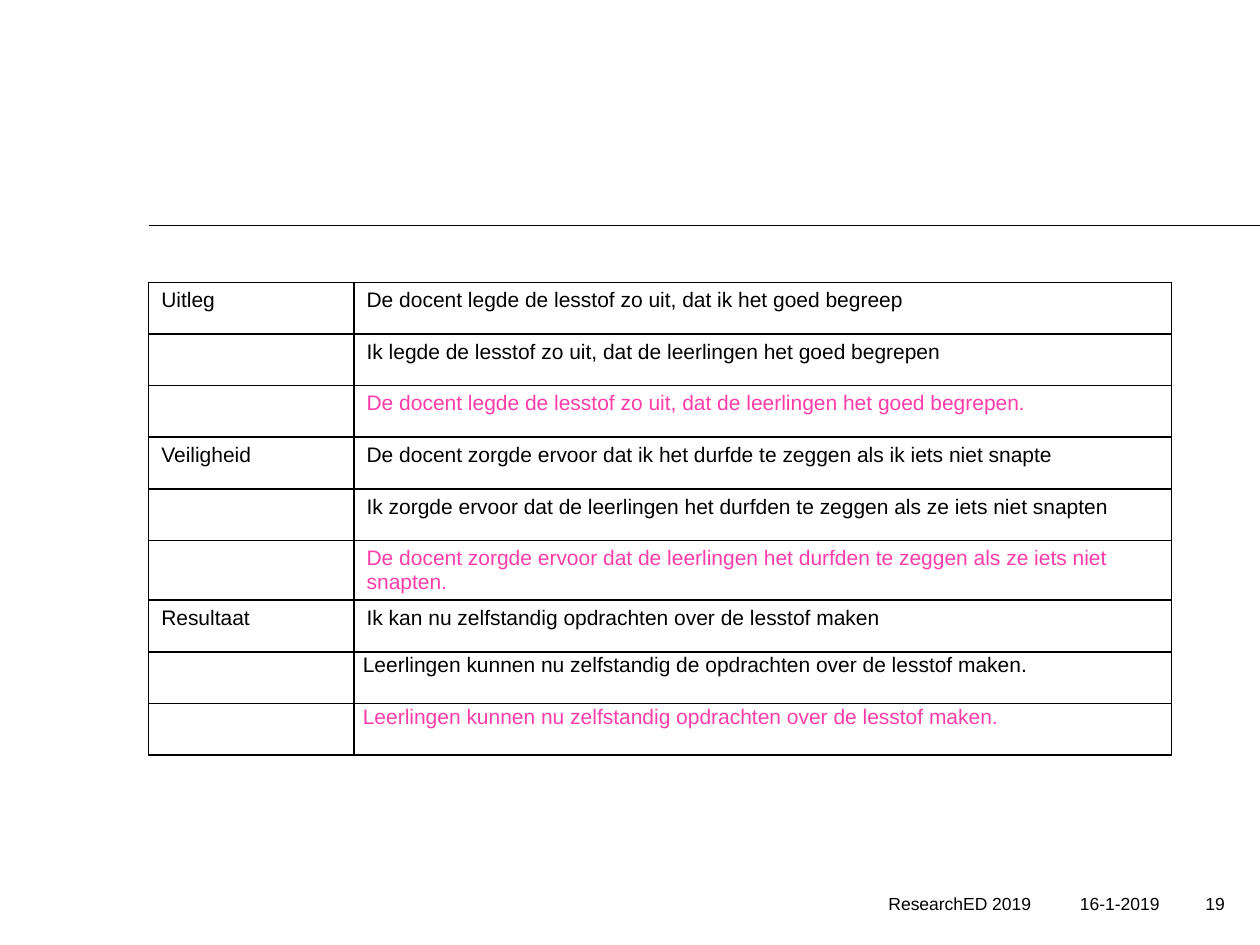
from dataclasses import dataclass

from lxml.etree import SubElement
from pptx import Presentation
from pptx.dml.color import RGBColor
from pptx.enum.text import PP_ALIGN
from pptx.oxml.ns import qn
from pptx.util import Inches, Pt

COLORS = {"ink": "000000", "pink": "FF3DA8"}
WIDTH, HEIGHT = Inches(10), Inches(7.5)
LEFT = Inches(1.18)
ROW_HEIGHT = Inches(0.41)
COLUMNS = Inches(1.63), Inches(6.49)
TIGHT = {"margin_left": Inches(0.07), "margin_right": Inches(0.07),
         "margin_top": 0, "margin_bottom": 0}


@dataclass
class Statement:
    text: str
    theme: str = ""
    color: str = "ink"
    tight: bool = False


@dataclass
class FooterItem:
    text: str
    left: float
    width: float
    right_inset: float = 0.1


STATEMENTS = [
    Statement("De docent legde de lesstof zo uit, dat ik het goed begreep", "Uitleg"),
    Statement("Ik legde de lesstof zo uit, dat de leerlingen het goed begrepen"),
    Statement("De docent legde de lesstof zo uit, dat de leerlingen het goed begrepen.",
              color="pink"),
    Statement("De docent zorgde ervoor dat ik het durfde te zeggen als ik iets niet snapte",
              "Veiligheid"),
    Statement("Ik zorgde ervoor dat de leerlingen het durfden te zeggen als ze iets niet snapten"),
    Statement("De docent zorgde ervoor dat de leerlingen het durfden te zeggen "
              "als ze iets niet snapten.", color="pink"),
    Statement("Ik kan nu zelfstandig opdrachten over de lesstof maken", "Resultaat"),
    Statement("Leerlingen kunnen nu zelfstandig de opdrachten over de lesstof maken.",
              tight=True),
    Statement("Leerlingen kunnen nu zelfstandig opdrachten over de lesstof maken.",
              color="pink", tight=True),
]
FOOTER = [
    FooterItem("ResearchED 2019", 3.87, 4.41),
    FooterItem("16-1-2019", 8.28, 1.02),
    FooterItem("19", 9.31, 0.41, right_inset=0),
]


def write(p, text: str, size: int, color: str = "ink") -> None:
    r = p.add_run()
    r.text = text
    for name, value in {"name": "Arial", "size": Pt(size)}.items():
        setattr(r.font, name, value)
    r.font.color.rgb = RGBColor.from_string(COLORS[color])


def add_rule(s) -> None:
    y = Inches(1.79)
    rule = s.shapes.add_connector(1, LEFT, y, WIDTH, y)
    rule.line.width = Pt(1)
    rule.line.color.rgb = RGBColor.from_string(COLORS["ink"])
    SubElement(rule._element.spPr, qn("a:effectLst"))


def style_cell(cell) -> None:
    """Give the cell a thin border on every side and no fill."""
    tc_pr = cell._tc.get_or_add_tcPr()
    for side in ("lnL", "lnR", "lnT", "lnB"):
        ln = SubElement(tc_pr, qn(f"a:{side}"), w=str(Pt(1)))
        fill = SubElement(ln, qn("a:solidFill"))
        SubElement(fill, qn("a:srgbClr"), val=COLORS["ink"])
    cell.fill.background()


def add_statements(s, statements: list[Statement]) -> None:
    count = len(statements)
    table = s.shapes.add_table(count, len(COLUMNS), LEFT, Inches(2.24),
                               sum(COLUMNS), ROW_HEIGHT * count).table
    table.first_row = table.horz_banding = False
    for column, width in zip(table.columns, COLUMNS):
        column.width = width
    for row, item in zip(table.rows, statements):
        row.height = ROW_HEIGHT
        theme, statement = row.cells
        for cell in (theme, statement):
            style_cell(cell)
        if item.theme:
            write(theme.text_frame.paragraphs[0], item.theme, 12)
        p = statement.text_frame.paragraphs[0]
        write(p, item.text, 12, item.color)
        if item.tight:
            p.line_spacing = 1.07
            for name, value in TIGHT.items():
                setattr(statement, name, value)


def add_footer_item(s, item: FooterItem) -> None:
    box = s.shapes.add_textbox(Inches(item.left), Inches(7),
                               Inches(item.width), Inches(0.52))
    tf = box.text_frame
    tf.word_wrap = True
    tf.margin_right = Inches(item.right_inset)
    p = tf.paragraphs[0]
    for name, value in {"alignment": PP_ALIGN.RIGHT, "line_spacing": Pt(15)}.items():
        setattr(p, name, value)
    write(p, item.text, 10)


def main() -> None:
    prs = Presentation()
    prs.slide_width, prs.slide_height = WIDTH, HEIGHT
    s = prs.slides.add_slide(prs.slide_layouts[6])
    add_rule(s)
    add_statements(s, STATEMENTS)
    for item in FOOTER:
        add_footer_item(s, item)
    prs.save("out.pptx")


if __name__ == "__main__":
    main()
